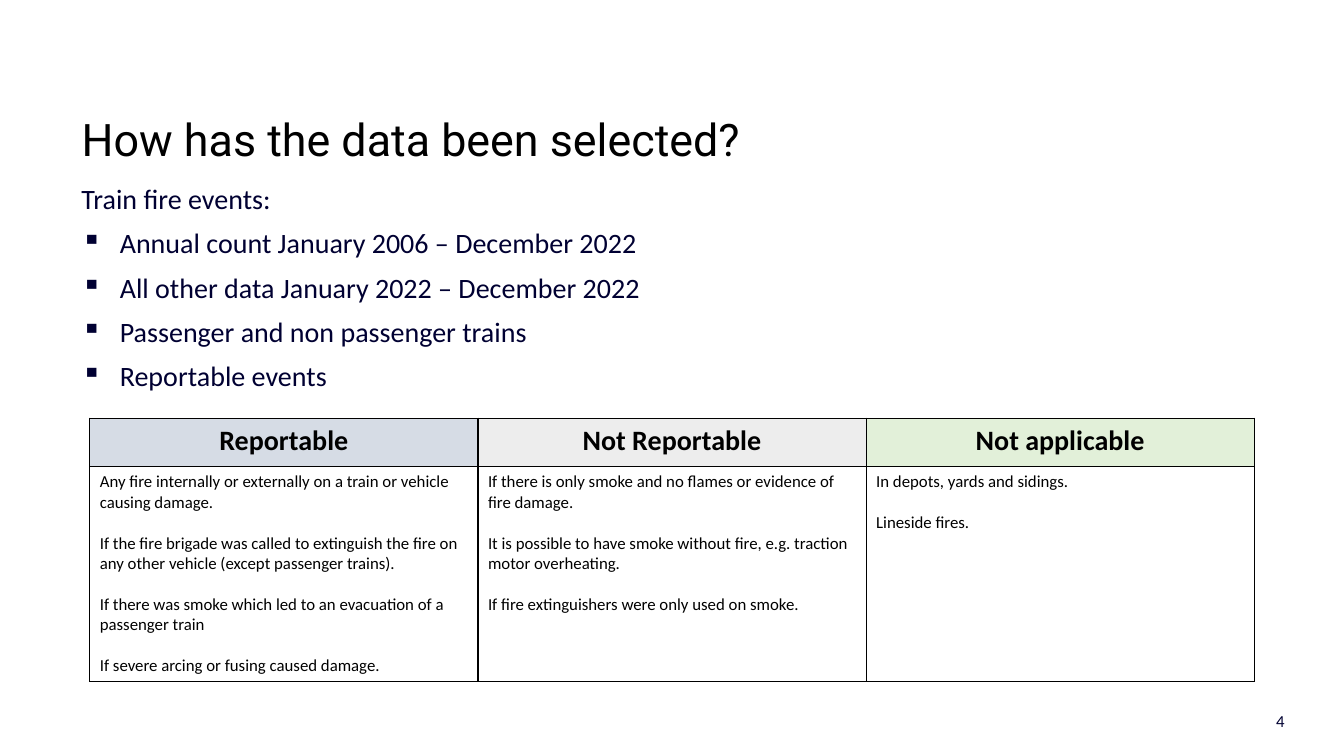
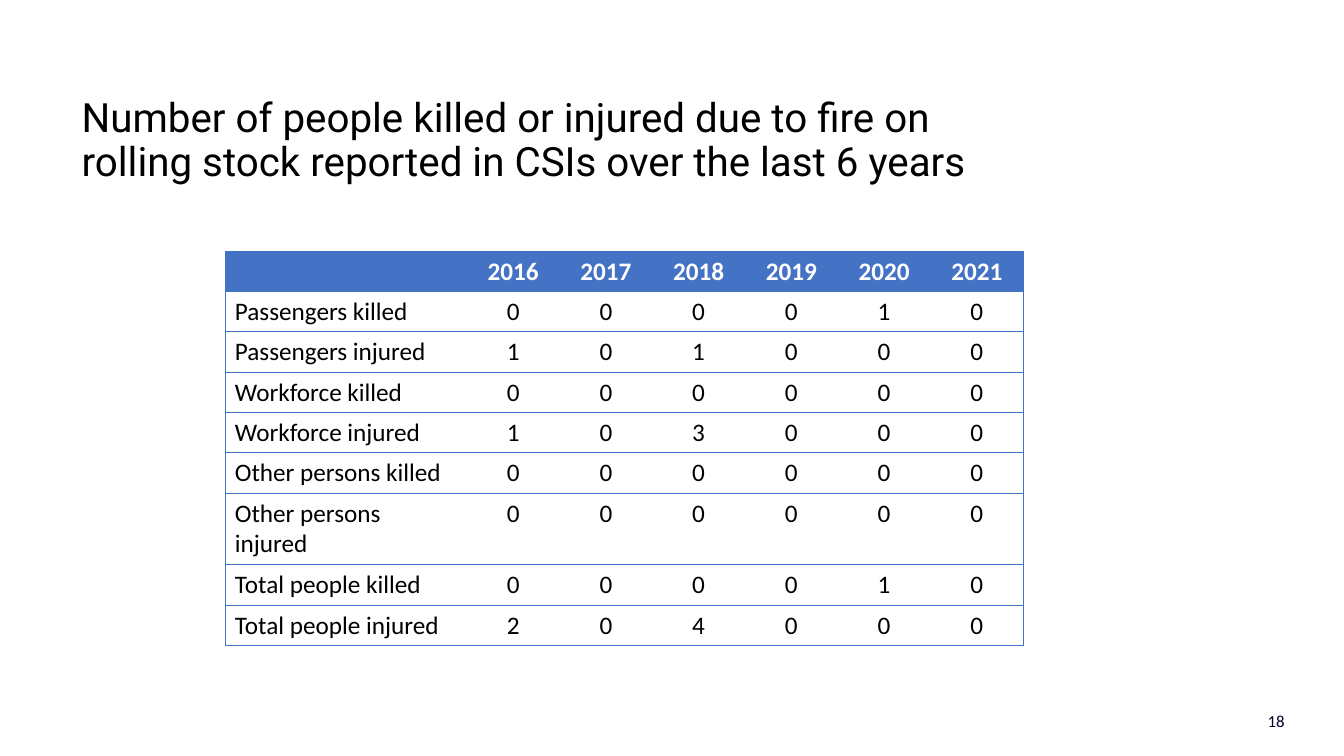
from lxml import etree
from pptx import Presentation
from pptx import util as u
from pptx.dml.color import RGBColor
from pptx.enum import text
from pptx.oxml import ns

PX = 9144
COLORS = {
    "ink": "000000",
    "navy": "000032",
    "white": "FFFFFF",
    "blue": "4472C4",
    "steel": "D6DCE5",
    "grey": "EDEDED",
    "green": "E2F0D9",
}
NO_STYLE = "{2D5ABB26-0587-4C30-8999-92F81FD0307C}"
LEFT, CENTER, RIGHT = text.PP_ALIGN.LEFT, text.PP_ALIGN.CENTER, text.PP_ALIGN.RIGHT
MIDDLE = text.MSO_ANCHOR.MIDDLE
TIGHT = {"alignment": LEFT, "line_spacing": 0.9}
CELL_GAP = 14.6
TITLE_BOX = (71, 106, 902, 69)
NUMBER_BOX = (984, 695, 300, 40)
BODY_BOX = (71, 179, 902, 249)
BULLET_INDENT = 38

CRITERIA = [
    ("Reportable", "steel", [
        "Any fire internally or externally on a train or vehicle causing damage.",
        "If the fire brigade was called to extinguish the fire on any other vehicle (except passenger trains).",
        "If there was smoke which led to an evacuation of a passenger train",
        "If severe arcing or fusing caused damage.",
    ]),
    ("Not Reportable", "grey", [
        "If there is only smoke and no flames or evidence of fire damage.",
        "It is possible to have smoke without fire, e.g. traction motor overheating.",
        "If fire extinguishers were only used on smoke.",
    ]),
    ("Not applicable", "green", [
        "In depots, yards and sidings.",
        "Lineside fires.",
    ]),
]
CASUALTIES = [
    ("", 2016, 2017, 2018, 2019, 2020, 2021),
    ("Passengers killed", 0, 0, 0, 0, 1, 0),
    ("Passengers injured", 1, 0, 1, 0, 0, 0),
    ("Workforce killed", 0, 0, 0, 0, 0, 0),
    ("Workforce injured", 1, 0, 3, 0, 0, 0),
    ("Other persons killed", 0, 0, 0, 0, 0, 0),
    ("Other persons injured", 0, 0, 0, 0, 0, 0),
    ("Total people killed", 0, 0, 0, 0, 1, 0),
    ("Total people injured", 2, 0, 4, 0, 0, 0),
]


def px(length):
    return u.Emu(length * PX)


def set_all(target, values):
    for name, value in values.items():
        setattr(target, name, value)


def add_span(para, wording, size, color, font="Calibri", bold=False):
    span = para.add_run()
    span.text = wording
    set_all(span.font, {"name": font, "size": u.Pt(size), "bold": bold})
    span.font.color.rgb = RGBColor.from_string(COLORS[color])


def add_bullet(para):
    props = para._p.get_or_add_pPr()
    props.set("marL", str(px(BULLET_INDENT)))
    props.set("indent", str(-px(BULLET_INDENT)))
    etree.SubElement(props, ns.qn("a:buChar")).set("char", "▪")


def write(frame, lines, layout, gap=0, bullets_from=None, **style):
    for index, line in enumerate(lines):
        para = frame.add_paragraph() if index else frame.paragraphs[0]
        if bullets_from is not None and index >= bullets_from:
            add_bullet(para)
        set_all(para, layout)
        para.space_before = u.Pt(gap if index else 0)
        if line:
            add_span(para, line, **style)


def place(shape, box):
    set_all(shape, dict(zip(("left", "top", "width", "height"), map(px, box))))


def add_text(page, box, lines, layout, anchor=text.MSO_ANCHOR.TOP, **style):
    frame = page.shapes.add_textbox(*map(px, box)).text_frame
    set_all(frame, {"word_wrap": True, "vertical_anchor": anchor})
    write(frame, lines, layout, **style)


def add_page(deck, title, title_size, number):
    page = deck.slides.add_slide(deck.slide_layouts[5])
    heading = page.shapes.title
    place(heading, TITLE_BOX)
    set_all(heading.text_frame, {
        "word_wrap": True,
        "vertical_anchor": MIDDLE,
        "auto_size": text.MSO_AUTO_SIZE.NONE,
    })
    write(heading.text_frame, [title], TIGHT, size=title_size, color="ink", font="Roboto")
    add_text(page, NUMBER_BOX, [str(number)], {"alignment": RIGHT}, MIDDLE, size=12, color="navy")
    return page


def add_grid(page, left, top, widths, heights):
    frame = page.shapes.add_table(
        len(heights), len(widths), px(left), px(top), px(sum(widths)), px(sum(heights)))
    table = frame.table
    table.horz_banding = False
    table._tbl.tblPr.find(ns.qn("a:tableStyleId")).text = NO_STYLE
    for column, width in zip(table.columns, widths):
        column.width = px(width)
    for row, height in zip(table.rows, heights):
        row.height = px(height)
    return table


def add_borders(cell, sides, color, points):
    props = cell._tc.get_or_add_tcPr()
    for side in sides:
        line = etree.SubElement(props, ns.qn(f"a:ln{side}"), w=str(u.Pt(points)))
        fill = etree.SubElement(line, ns.qn("a:solidFill"))
        etree.SubElement(fill, ns.qn("a:srgbClr")).set("val", COLORS[color])


def fill_cell(cell, lines, fill, align, **style):
    cell.fill.solid()
    cell.fill.fore_color.rgb = RGBColor.from_string(COLORS[fill])
    write(cell.text_frame, lines, {"alignment": align}, **style)


def add_criteria(page):
    table = add_grid(page, 89, 415, [385] * len(CRITERIA), [48, 213])
    for index, (heading, fill, rules) in enumerate(CRITERIA):
        top, bottom = table.cell(0, index), table.cell(1, index)
        for cell in (top, bottom):
            add_borders(cell, "LRTB", "ink", 1)
        fill_cell(top, [heading], fill, CENTER, size=20, color="ink", bold=True)
        fill_cell(bottom, rules, "white", LEFT, gap=CELL_GAP, size=12, color="ink")


def add_casualties(page):
    years = len(CASUALTIES[0]) - 1
    heights = [71 if row[0] == "Other persons injured" else 40 for row in CASUALTIES]
    table = add_grid(page, 223, 249, [240] + [92] * years, heights)
    for row, values in enumerate(CASUALTIES):
        header = row == 0
        for column, value in enumerate(values):
            cell = table.cell(row, column)
            sides = ("L" if column == 0 else "") + ("R" if column == years else "") + "TB"
            add_borders(cell, sides, "blue", 0.5)
            fill_cell(
                cell, [str(value)], "blue" if header else "white",
                CENTER if column else LEFT,
                size=18, color="white" if header else "ink", bold=header)


def main():
    deck = Presentation()
    set_all(deck, {"slide_width": px(1333), "slide_height": px(750)})

    selection = add_page(deck, "How has the data been selected?", 32, 4)
    add_text(selection, BODY_BOX, [
        "Train fire events:",
        "Annual count January 2006 – December 2022",
        "All other data January 2022 – December 2022",
        "Passenger and non passenger trains",
        "Reportable events",
    ], TIGHT, gap=10, bullets_from=1, size=20, color="navy")
    add_criteria(selection)

    casualties = add_page(
        deck,
        "Number of people killed or injured due to fire on rolling stock "
        "reported in CSIs over the last 6 years",
        28.8, 18)
    add_casualties(casualties)

    deck.save("out.pptx")


if __name__ == "__main__":
    main()
